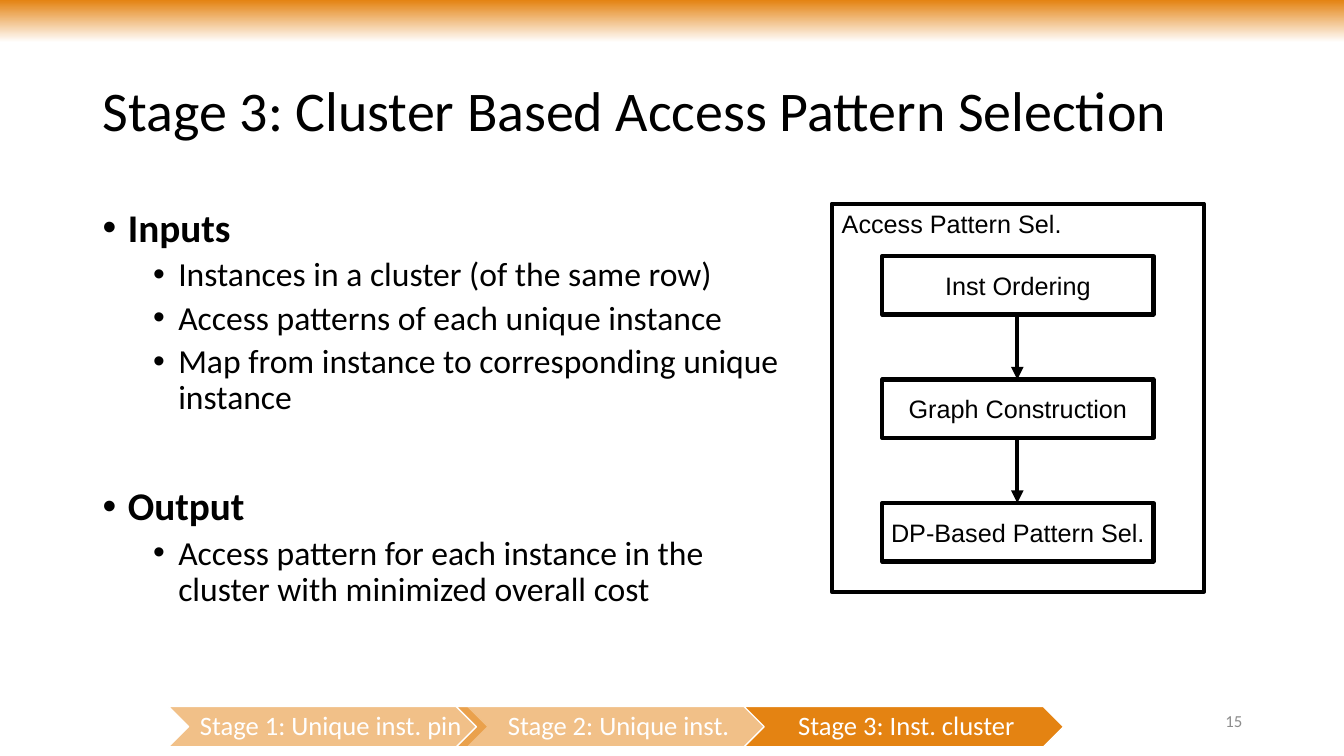
from dataclasses import dataclass

from lxml.etree import SubElement
from pptx import Presentation
from pptx.dml.color import RGBColor
from pptx.enum.shapes import MSO_CONNECTOR, MSO_SHAPE
from pptx.enum.text import MSO_ANCHOR, MSO_AUTO_SIZE, PP_ALIGN
from pptx.oxml.ns import qn
from pptx.util import Inches, Pt


@dataclass(frozen=True)
class Theme:
    orange = RGBColor(0xE4, 0x83, 0x12)
    white = RGBColor(0xFF, 0xFF, 0xFF)
    black = RGBColor(0, 0, 0)
    gray = RGBColor(0x8C, 0x8C, 0x8C)
    text_font = "Calibri"
    diagram_font = "Arial"
    title_size = Pt(40)
    heading_size = Pt(28)
    item_size = Pt(24)
    stage_size = Pt(19)
    diagram_size = Pt(18)
    number_size = Pt(12)


theme = Theme()


def format_text(paragraph, text, size, color, name=theme.text_font, align=PP_ALIGN.LEFT):
    paragraph.text = text
    paragraph.alignment = align
    paragraph.font.size = size
    paragraph.font.name = name
    paragraph.font.color.rgb = color


def add_box(left, top, width, height, text, align, anchor, wrap):
    box = slide.shapes.add_shape(
        MSO_SHAPE.RECTANGLE, Inches(left), Inches(top), Inches(width), Inches(height))
    box.shadow.inherit = False
    box.fill.background()
    box.line.color.rgb = theme.black
    box.line.width = Pt(3)
    frame = box.text_frame
    frame.word_wrap = wrap
    frame.vertical_anchor = anchor
    format_text(frame.paragraphs[0], text, theme.diagram_size, theme.black,
                theme.diagram_font, align)


presentation = Presentation()
presentation.slide_width = Inches(13.33)
presentation.slide_height = Inches(7.5)
slide = presentation.slides.add_slide(presentation.slide_layouts[5])

band = slide.shapes.add_shape(
    MSO_SHAPE.RECTANGLE, Inches(0), Inches(0), Inches(13.33), Inches(0.42))
band.shadow.inherit = False
band.line.fill.background()
band.fill.gradient()
band.fill.gradient_angle = 270
for stop, position, color in zip(
        band.fill.gradient_stops, (0, 1), (theme.orange, theme.white)):
    stop.position = position
    stop.color.rgb = color

title = slide.shapes.title
title.left, title.top = Inches(0.92), Inches(0.4)
title.width, title.height = Inches(11.5), Inches(1.45)
title.text_frame.auto_size = MSO_AUTO_SIZE.NONE
title.text_frame.vertical_anchor = MSO_ANCHOR.MIDDLE
title_paragraph = title.text_frame.paragraphs[0]
format_text(title_paragraph, "Stage 3: Cluster Based Access Pattern Selection",
            theme.title_size, theme.black)
title_paragraph.line_spacing = 0.9

outline = [
    (0, "Inputs", 0),
    (1, "Instances in a cluster (of the same row)", 5),
    (1, "Access patterns of each unique instance", 5),
    (1, "Map from instance to corresponding unique instance", 5),
    (0, "Output", 50),
    (1, "Access pattern for each instance in the cluster with minimized overall cost", 5),
]
body = slide.shapes.add_textbox(Inches(0.92), Inches(2.02), Inches(7), Inches(4.76))
body.text_frame.word_wrap = True
for index, (level, text, space_before) in enumerate(outline):
    paragraph = body.text_frame.paragraphs[0] if index == 0 else body.text_frame.add_paragraph()
    paragraph.level = level
    paragraph.line_spacing = 0.9
    paragraph.space_before = Pt(space_before)
    properties = paragraph._p.get_or_add_pPr()
    properties.set("marL", str(Inches(0.25 + 0.5 * level)))
    properties.set("indent", str(Inches(-0.25)))
    SubElement(properties, qn("a:buFont"), typeface=theme.diagram_font)
    SubElement(properties, qn("a:buChar"), char="•")
    size = theme.item_size if level else theme.heading_size
    format_text(paragraph, text, size, theme.black)
    paragraph.font.bold = level == 0

number = slide.shapes.add_textbox(Inches(9.42), Inches(6.95), Inches(3), Inches(0.4))
number.text_frame.word_wrap = True
number.text_frame.vertical_anchor = MSO_ANCHOR.MIDDLE
format_text(number.text_frame.paragraphs[0], "15", theme.number_size, theme.gray,
            align=PP_ALIGN.RIGHT)

add_box(8.25, 2.02, 3.69, 3.85, "Access Pattern Sel.", PP_ALIGN.LEFT, MSO_ANCHOR.TOP, True)
step_top, step_pitch, step_height = 2.54, 1.225, 0.58
steps = ["Inst Ordering", "Graph Construction", "DP-Based Pattern Sel."]
for index, text in enumerate(steps):
    top = step_top + index * step_pitch
    add_box(8.75, top, 2.69, step_height, text, PP_ALIGN.CENTER, MSO_ANCHOR.MIDDLE, False)
    if index:
        arrow = slide.shapes.add_connector(
            MSO_CONNECTOR.STRAIGHT, Inches(10.09), Inches(top - step_pitch + step_height),
            Inches(10.09), Inches(top))
        arrow.line.color.rgb = theme.black
        arrow.line.width = Pt(3)
        SubElement(arrow.line._get_or_add_ln(), qn("a:tailEnd"), type="triangle")
        SubElement(arrow._element.spPr, qn("a:effectLst"))

stages = [
    ("Stage 1: Unique inst. pin", False),
    ("Stage 2: Unique inst.", False),
    ("Stage 3: Inst. cluster", True),
]
for index, (text, current) in enumerate(stages):
    chevron = slide.shapes.add_shape(
        MSO_SHAPE.CHEVRON, Inches(1.67 + index * 2.855), Inches(7.01),
        Inches(3.17), Inches(0.4))
    chevron.shadow.inherit = False
    chevron.fill.solid()
    chevron.fill.fore_color.rgb = theme.orange
    if not current:
        color_element = chevron._element.spPr.find(qn("a:solidFill")).find(qn("a:srgbClr"))
        SubElement(color_element, qn("a:alpha"), val="50000")
    chevron.line.color.rgb = theme.white
    chevron.line.width = Pt(1)
    frame = chevron.text_frame
    frame.word_wrap = False
    frame.vertical_anchor = MSO_ANCHOR.MIDDLE
    frame.margin_left, frame.margin_right = Inches(0.05), Inches(0)
    frame.margin_top = frame.margin_bottom = Inches(0.03)
    format_text(frame.paragraphs[0], text, theme.stage_size, theme.white,
                align=PP_ALIGN.CENTER)
    frame.paragraphs[0].line_spacing = 0.9

presentation.save("out.pptx")
